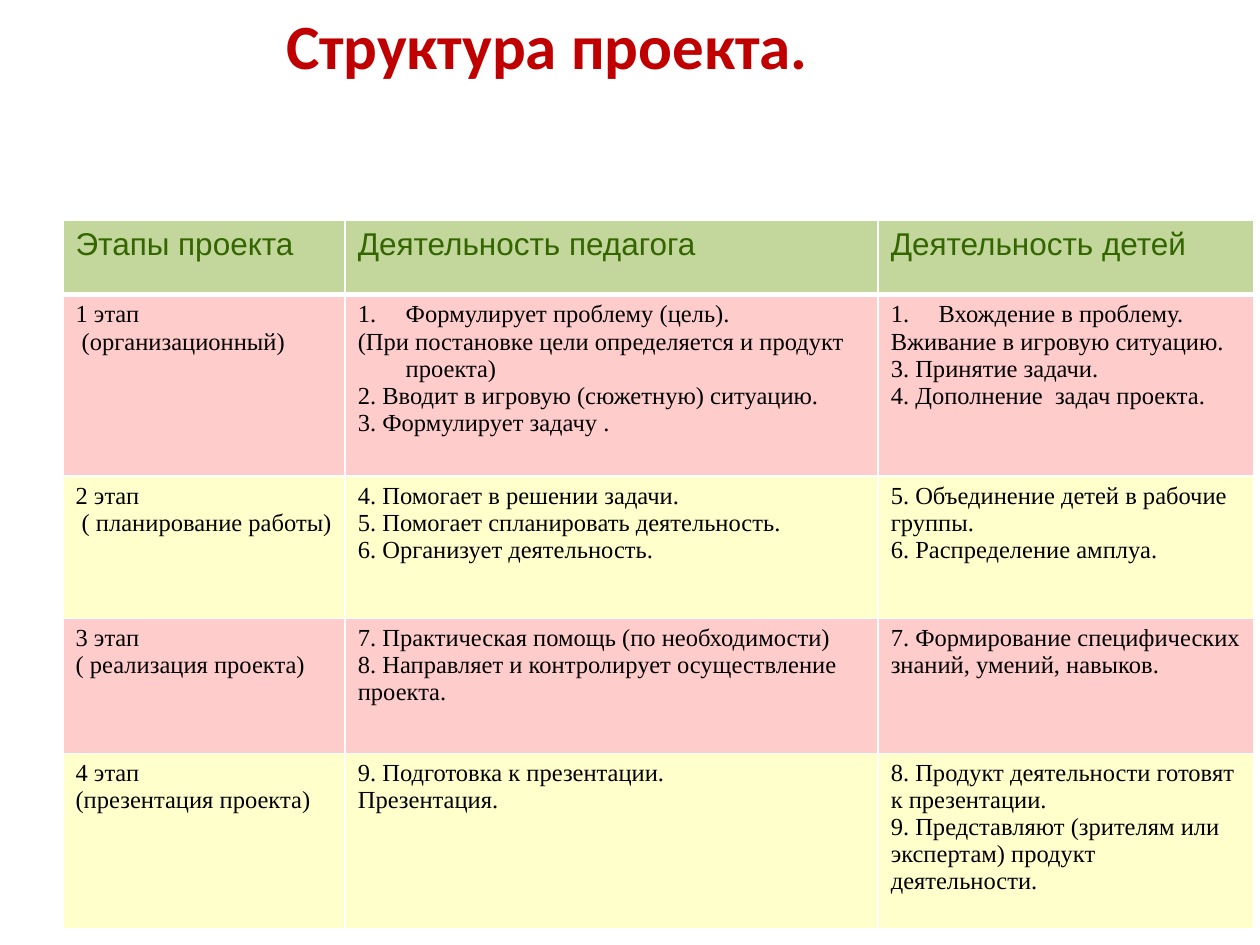
from lxml.etree import SubElement
from pptx import Presentation
from pptx.dml.color import RGBColor
from pptx.enum.text import MSO_ANCHOR, PP_ALIGN
from pptx.oxml.ns import qn
from pptx.util import Inches, Pt

GREEN, PINK, YELLOW, WHITE = "C3D69B", "FFCCCC", "FFFFCC", "FFFFFF"
TITLE_BOX = (2.17, 0, 4.41, 0.71)
TABLE_BOX = (0.5, 1.75, 9.45, 5.62)
COLUMN_WIDTHS = (2.24, 4.23, 2.98)
ROW_HEIGHTS = (0.59, 1.44, 1.13, 1.07, 1.39)
HANGING = 0.38
NUMBERED_ROW = 1  # its lists hang, and their first line is auto-numbered

ROWS = [
    ["Этапы проекта", "Деятельность педагога", "Деятельность детей"],
    ["1 этап\n (организационный)",
     "Формулирует проблему (цель).\n"
     "(При постановке цели определяется и продукт проекта)\n"
     "2. Вводит в игровую (сюжетную) ситуацию.\n"
     "3. Формулирует задачу .",
     "Вхождение в проблему.\n"
     "Вживание в игровую ситуацию.\n"
     "3. Принятие задачи.\n"
     "4. Дополнение  задач проекта."],
    ["2 этап\n ( планирование работы)",
     "4. Помогает в решении задачи.\n"
     "5. Помогает спланировать деятельность.\n"
     "6. Организует деятельность.",
     "5. Объединение детей в рабочие группы.\n"
     "6. Распределение амплуа."],
    ["3 этап\n( реализация проекта)",
     "7. Практическая помощь (по необходимости)\n"
     "8. Направляет и контролирует осуществление проекта.",
     "7. Формирование специфических знаний, умений, навыков."],
    ["4 этап\n(презентация проекта)",
     "9. Подготовка к презентации.\nПрезентация.",
     "8. Продукт деятельности готовят к презентации.\n"
     "9. Представляют (зрителям или  экспертам) продукт деятельности."],
]


def color(value):
    return RGBColor.from_string(value)


def style_text(text_frame, font_name, size, text_color, bold=False):
    for para in text_frame.paragraphs:
        for span in para.runs:
            span.font.name = font_name
            span.font.size = Pt(size)
            span.font.bold = bold
            span.font.color.rgb = color(text_color)


def set_borders(cell, bottom_width):
    properties = cell._tc.get_or_add_tcPr()
    for side, width in (("L", 1), ("R", 1), ("T", 1), ("B", bottom_width)):
        line = SubElement(properties, qn(f"a:ln{side}"), w=str(Pt(width)))
        fill = SubElement(line, qn("a:solidFill"))
        SubElement(fill, qn("a:srgbClr"), val=WHITE)


def hang_list(text_frame):
    for index, para in enumerate(text_frame.paragraphs):
        properties = para._p.get_or_add_pPr()
        properties.set("marL", str(Inches(HANGING)))
        properties.set("indent", str(-Inches(HANGING)))
        if index == 0:
            SubElement(properties, qn("a:buAutoNum"), type="arabicPeriod")
        else:
            SubElement(properties, qn("a:buNone"))


def add_title(page, box):
    title = page.shapes.title
    title.left, title.top, title.width, title.height = map(Inches, box)
    title.text_frame.text = "Структура проекта."
    title.text_frame.vertical_anchor = MSO_ANCHOR.TOP
    title.text_frame.paragraphs[0].alignment = PP_ALIGN.LEFT
    style_text(title.text_frame, "Calibri", 36, "C00000", bold=True)


def add_stage_table(page, box):
    table = page.shapes.add_table(len(ROWS), len(COLUMN_WIDTHS), *map(Inches, box)).table
    for column, width in zip(table.columns, COLUMN_WIDTHS):
        column.width = Inches(width)
    for row, height in zip(table.rows, ROW_HEIGHTS):
        row.height = Inches(height)

    for row_index, texts in enumerate(ROWS):
        header = row_index == 0
        band = GREEN if header else (YELLOW, PINK)[row_index % 2]
        for column_index, text in enumerate(texts):
            cell = table.cell(row_index, column_index)
            cell.text_frame.text = text
            set_borders(cell, 3 if header else 1)
            cell.fill.solid()
            cell.fill.fore_color.rgb = color(band)
            if row_index == NUMBERED_ROW and column_index > 0:
                hang_list(cell.text_frame)
            if header:
                style_text(cell.text_frame, "Arial", 18, "336600")
            else:
                style_text(cell.text_frame, "Times New Roman", 14, "000000")


def main():
    deck = Presentation()
    deck.slide_width, deck.slide_height = Inches(10), Inches(7.5)
    page = deck.slides.add_slide(deck.slide_layouts.get_by_name("Title Only"))
    add_stage_table(page, TABLE_BOX)
    add_title(page, TITLE_BOX)
    deck.save("out.pptx")


if __name__ == "__main__":
    main()
